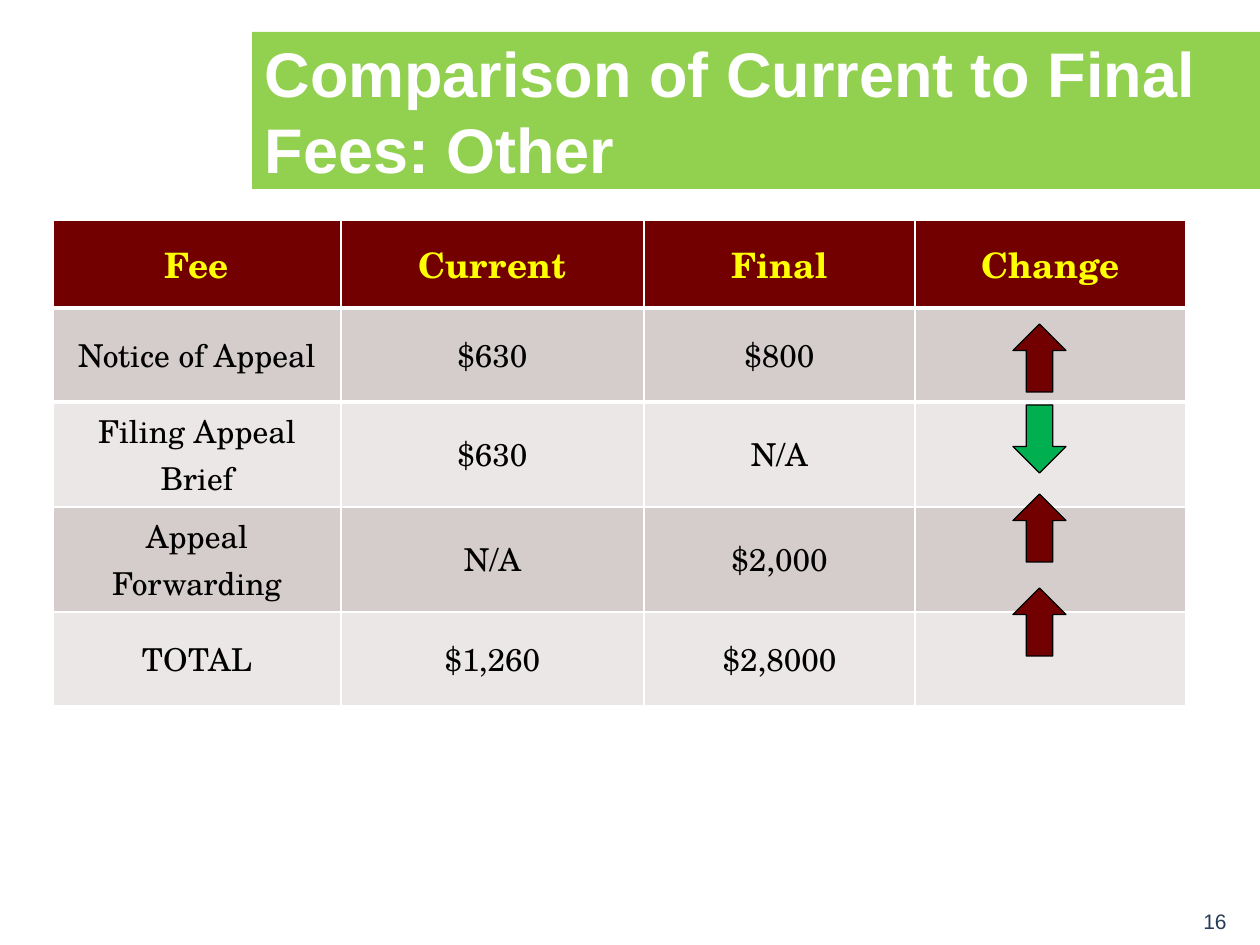
from lxml import etree
from pptx import Presentation
from pptx import util as u
from pptx.dml.color import RGBColor
from pptx.enum import shapes, text
from pptx.oxml.ns import qn

TITLE = "Comparison of Current to Final Fees: Other"
PAGE = "16"
FEES = [
    ("Fee", "Current", "Final", "Change"),
    ("Notice of Appeal", "$630", "$800", ""),
    ("Filing Appeal Brief", "$630", "N/A", ""),
    ("Appeal Forwarding", "N/A", "$2,000", ""),
    ("TOTAL", "$1,260", "$2,8000", ""),
]
COLS = (288, 303, 271, 271)
ROWS = (88, 94, 105, 105, 94)
ARROWS = [("up", 324), ("down", 405), ("up", 494), ("up", 588)]  # way, top


class Theme:
    sans, serif = "Arial", "TeX Gyre Schola"
    title, head, body, page = 36, 20, 18, 12
    white, black, navy = "FFFFFF", "000000", "273C56"
    lime, maroon, yellow, green = "92D050", "730000", "FFFF00", "00B050"
    bands = ("EBE7E7", "D5CCCC")


def px(*vals):
    return [round(v * 914400 / 126) for v in vals]


def paint(fill, color):
    fill.solid()
    fill.fore_color.rgb = RGBColor.from_string(color)


def style(para, face, size, color, bold, align):
    para.alignment = align
    font = para.font
    font.name, font.size, font.bold = face, u.Pt(size), bold
    font.color.rgb = RGBColor.from_string(color)


def edge(cell, side, width):
    """Draw one white border of a cell; side is an a:ln* tag."""
    line = etree.Element(qn(side), w=str(u.Pt(width)))
    fill = etree.SubElement(line, qn("a:solidFill"))
    etree.SubElement(fill, qn("a:srgbClr"), val=Theme.white)
    cell._tc.get_or_add_tcPr().insert(0, line)


def add_page(slide):
    box = slide.shapes.add_textbox(*px(977, 872, 262, 63))
    frame = box.text_frame
    frame.word_wrap = True
    frame.vertical_anchor = text.MSO_ANCHOR.BOTTOM
    frame.margin_bottom = u.Inches(0.01)
    frame.text = PAGE
    style(frame.paragraphs[0], Theme.sans, Theme.page, Theme.navy, False,
          text.PP_ALIGN.RIGHT)


def add_title(slide):
    title = slide.shapes.title
    title.left, title.top, title.width, title.height = px(252, 32, 1008, 157)
    paint(title.fill, Theme.lime)
    frame = title.text_frame
    frame.text = TITLE
    frame.word_wrap = True
    frame.auto_size = text.MSO_AUTO_SIZE.NONE
    frame.vertical_anchor = text.MSO_ANCHOR.MIDDLE
    style(frame.paragraphs[0], Theme.sans, Theme.title, Theme.white, True,
          text.PP_ALIGN.LEFT)


def add_fees(slide):
    table = slide.shapes.add_table(
        len(ROWS), len(COLS), *px(53, 220, sum(COLS), sum(ROWS))).table
    for col, width in zip(table.columns, px(*COLS)):
        col.width = width
    for row, height in zip(table.rows, px(*ROWS)):
        row.height = height
    for r, fee in enumerate(FEES):
        head = r == 0
        size = Theme.head if head else Theme.body
        color = Theme.yellow if head else Theme.black
        for c, words in enumerate(fee):
            cell = table.cell(r, c)
            paint(cell.fill, Theme.maroon if head else Theme.bands[r % 2])
            if head:
                edge(cell, "a:lnB", 3)
            elif r == 1:
                edge(cell, "a:lnT", 3)
            cell.vertical_anchor = text.MSO_ANCHOR.MIDDLE
            cell.text = words
            style(cell.text_frame.paragraphs[0], Theme.serif, size, color,
                  head, text.PP_ALIGN.CENTER)


def add_arrows(slide):
    kinds = {
        "up": (shapes.MSO_SHAPE.UP_ARROW, Theme.maroon),
        "down": (shapes.MSO_SHAPE.DOWN_ARROW, Theme.green),
    }
    for way, top in ARROWS:
        kind, color = kinds[way]
        arrow = slide.shapes.add_shape(kind, *px(1013, top, 53, 68))
        arrow.shadow.inherit = False
        paint(arrow.fill, color)
        paint(arrow.line.fill, Theme.black)
        arrow.line.width = u.Pt(0.75)


def main():
    deck = Presentation()
    deck.slide_width, deck.slide_height = px(1260, 945)
    slide = deck.slides.add_slide(deck.slide_layouts[5])
    add_page(slide)
    add_title(slide)
    add_fees(slide)
    add_arrows(slide)
    deck.save("out.pptx")


if __name__ == "__main__":
    main()
